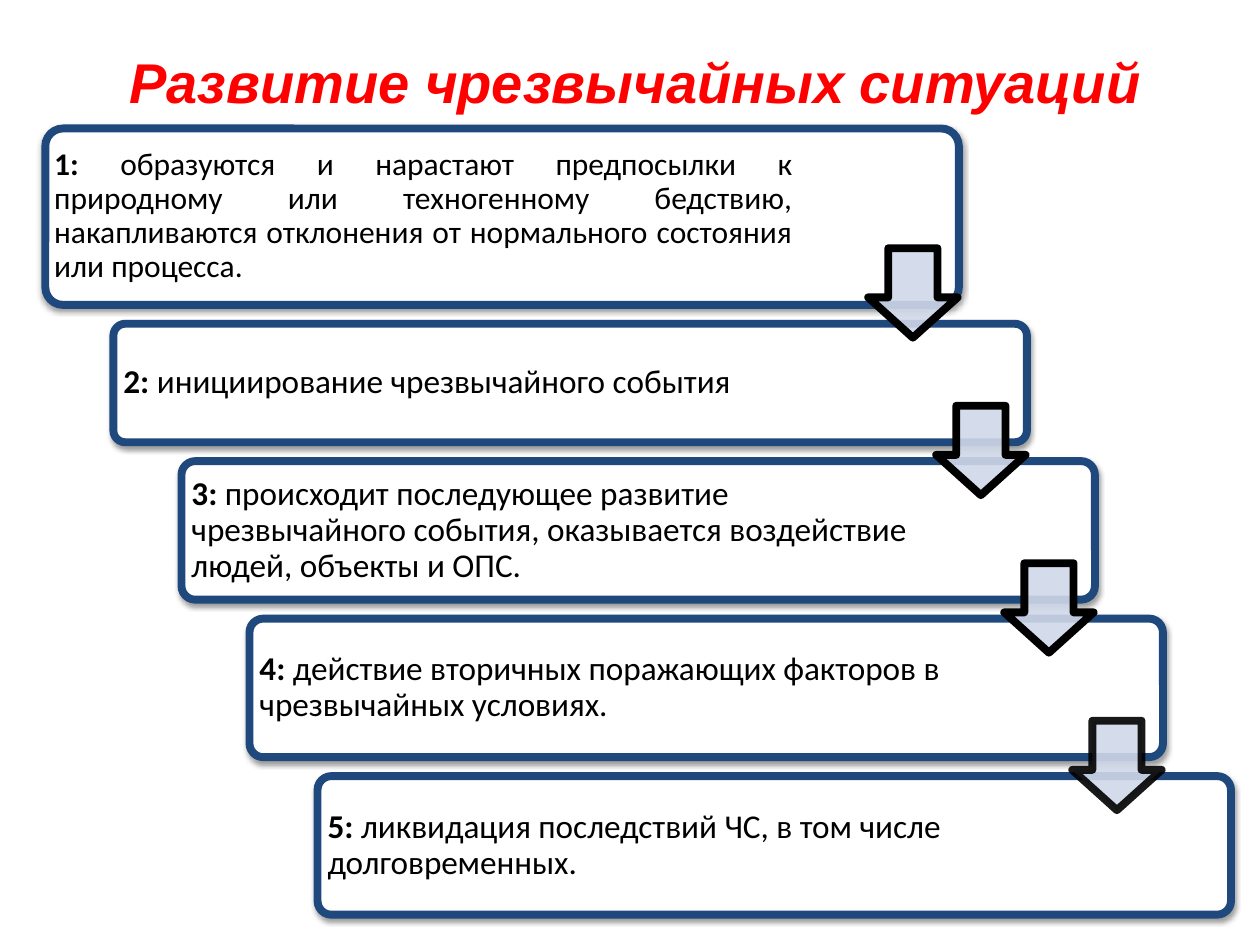
from lxml import etree
from pptx import Presentation
from pptx.dml.color import RGBColor
from pptx.enum.shapes import MSO_SHAPE
from pptx.enum.text import MSO_ANCHOR, PP_ALIGN
from pptx.oxml import parse_xml
from pptx.oxml.ns import qn
from pptx.util import Inches, Pt

ROUND, ARROW = MSO_SHAPE.ROUNDED_RECTANGLE, MSO_SHAPE.DOWN_ARROW
MIDDLE = MSO_ANCHOR.MIDDLE
LEFT, CENTER, JUST = PP_ALIGN.LEFT, PP_ALIGN.CENTER, PP_ALIGN.JUSTIFY

THEME = {
    "card": "FFFFFF", "edge": "1F497D", "arrow": "D0D8E8", "black": "000000",
    "line": 4.5, "clear": "90000",
    "title": {"name": "Arial", "size": Pt(32), "bold": True, "italic": True},
    "red": "FF0000", "body": "Calibri",
}
SHADOW = (
    '<a:effectLst xmlns:a="http://schemas.openxmlformats.org/drawingml/2006/main">'
    '<a:outerShdw blurRad="39370" dist="20320" dir="5400000" rotWithShape="0">'
    '<a:srgbClr val="000000"><a:alpha val="38000"/></a:srgbClr>'
    '</a:outerShdw></a:effectLst>'
)
STEPS = [
    (140, 18, 7, JUST, "образуются и нарастают предпосылки к природному или техногенному "
     "бедствию, накапливаются отклонения от нормального состояния или процесса."),
    (94, 19, 8, JUST, "инициирование чрезвычайного события"),
    (110, 19, 8, LEFT, "происходит последующее развитие чрезвычайного события, "
     "оказывается воздействие людей, объекты и ОПС."),
    (110, 19, 8, LEFT, "действие вторичных поражающих факторов в чрезвычайных условиях."),
    (110, 19, 8, LEFT, "ликвидация последствий ЧС, в том числе долговременных."),
]

deck = Presentation()
deck.slide_width, deck.slide_height = Inches(10), Inches(7.5)
COL, ROW = deck.slide_width // 1000, deck.slide_height // 750
slide = deck.slides.add_slide(deck.slide_layouts[5])
shapes = slide.shapes


def box(x, y, w, h):
    return x * COL, y * ROW, w * COL, h * ROW


def draw(kind, place, adjust, fill, edge):
    shape = shapes.add_shape(kind, *place)
    for i, share in enumerate(adjust):
        shape.adjustments[i] = share
    shape.shadow.inherit = False
    shape.fill.solid()
    shape.fill.fore_color.rgb = RGBColor.from_string(fill)
    shape.line.color.rgb = RGBColor.from_string(edge)
    shape.line.width = Pt(THEME["line"])
    return shape


title = shapes.title
title.left, title.top, title.width, title.height = box(28, 21, 953, 87)
title.text_frame.text = "Развитие чрезвычайных ситуаций"
title.text_frame.vertical_anchor = MIDDLE
para = title.text_frame.paragraphs[0]
para.alignment = CENTER
font = para.runs[0].font
for key, value in THEME["title"].items():
    setattr(font, key, value)
font.color.rgb = RGBColor.from_string(THEME["red"])

SHIFT, GAP = 54, 15
top = 102
for i, (high, size, inset, align, words) in enumerate(STEPS):
    left = 36 + i * SHIFT
    card = draw(ROUND, box(left, top, 725, high), [0.1], THEME["card"], THEME["edge"])
    props = card.fill._xPr
    props.replace(props.find(qn("a:effectLst")), parse_xml(SHADOW))

    frame = shapes.add_textbox(*box(left, top, 600, high)).text_frame
    form = {"word_wrap": True, "vertical_anchor": MIDDLE}
    for side in ("left", "top", "right", "bottom"):
        form["margin_" + side] = inset * COL
    for key, value in form.items():
        setattr(frame, key, value)
    para = frame.paragraphs[0]
    para.alignment, para.line_spacing = align, 0.9
    for text, bold in ((f"{i + 1}: ", True), (words, False)):
        run = para.add_run()
        run.text = text
        look = {"name": THEME["body"], "size": Pt(size), "bold": bold}
        for key, value in look.items():
            setattr(run.font, key, value)
        run.font.color.rgb = RGBColor.from_string(THEME["black"])
    top += high + GAP

for i in range(len(STEPS) - 1):
    place = box(689 + i * SHIFT, 197 + i * 125, 71, 71)
    arrow = draw(ARROW, place, [0.55, 0.45], THEME["arrow"], THEME["black"])
    fills = [arrow.fill]
    if i == len(STEPS) - 2:
        fills.append(arrow.line.fill)
    for fill in fills:
        tint = fill._xPr.find(qn("a:solidFill"))[0]
        etree.SubElement(tint, qn("a:alpha"), val=THEME["clear"])

deck.save("out.pptx")
